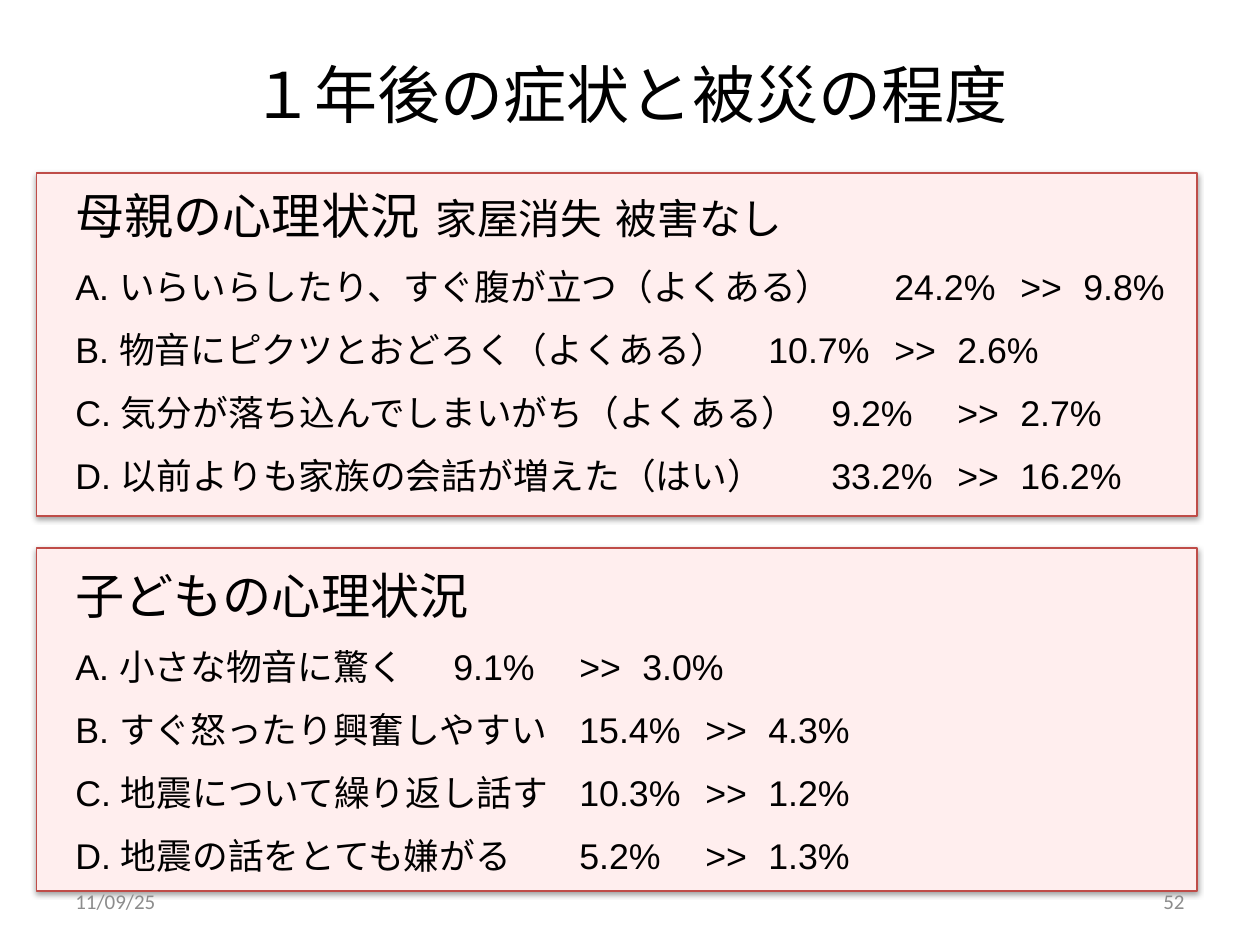
from lxml import etree
from pptx import Presentation
from pptx.dml.color import RGBColor
from pptx.enum.shapes import MSO_SHAPE
from pptx.enum.text import MSO_ANCHOR, PP_ALIGN
from pptx.oxml.ns import qn
from pptx.util import Inches, Pt

RECTANGLE = MSO_SHAPE.RECTANGLE
TOP, MIDDLE = MSO_ANCHOR.TOP, MSO_ANCHOR.MIDDLE
LEFT, CENTER, RIGHT = PP_ALIGN.LEFT, PP_ALIGN.CENTER, PP_ALIGN.RIGHT
WIDTH, HEIGHT = Inches(10), Inches(7.5)

MOTHER_ROWS = [
    ("A. いらいらしたり、すぐ腹が立つ（よくある）", "24.2%", "9.8%", 6.5),
    ("B. 物音にピクツとおどろく（よくある）", "10.7%", "2.6%", 5.5),
    ("C. 気分が落ち込んでしまいがち（よくある）", "9.2%", "2.7%", 6),
    ("D. 以前よりも家族の会話が増えた（はい）", "33.2%", "16.2%", 6),
]
CHILD_ROWS = [
    ("A. 小さな物音に驚く", "9.1%", "3.0%", 3),
    ("B. すぐ怒ったり興奮しやすい", "15.4%", "4.3%", 4),
    ("C. 地震について繰り返し話す", "10.3%", "1.2%", 4),
    ("D. 地震の話をとても嫌がる", "5.2%", "1.3%", 4),
]


def color(value):
    return RGBColor.from_string(value)


class SlideBuilder:
    text_color = "000000"
    muted_color = "8C8C8C"
    panel_fill = "FFEEEE"
    panel_line = "BF4C48"
    body_font, footer_font = "Arial", "Calibri"
    title_size, heading_size, label_size, row_size, footer_size = 36, 28.1, 23.8, 20.4, 12
    row_pitch = 36

    def __init__(self, presentation):
        self.slide = presentation.slides.add_slide(presentation.slide_layouts[6])

    def place(self, left, top, width, height):
        return int(WIDTH * left), int(HEIGHT * top), int(WIDTH * width), int(HEIGHT * height)

    def panel(self, *shares):
        shape = self.slide.shapes.add_shape(RECTANGLE, *self.place(*shares))
        shape.shadow.inherit = False
        shape.fill.solid()
        shape.fill.fore_color.rgb = color(self.panel_fill)
        shape.line.color.rgb = color(self.panel_line)
        shape.line.width = Pt(0.75)
        effects = shape._element.spPr.find(qn("a:effectLst"))
        shadow = etree.SubElement(effects, qn("a:outerShdw"), blurRad=str(Pt(3.1)),
                                  dist=str(Pt(1.6)), dir="5400000", rotWithShape="0")
        shade = etree.SubElement(shadow, qn("a:srgbClr"), val="000000")
        etree.SubElement(shade, qn("a:alpha"), val="38000")

    def text_frame(self, shares, anchor):
        frame = self.slide.shapes.add_textbox(*self.place(*shares)).text_frame
        frame.word_wrap = True
        frame.vertical_anchor = anchor
        return frame

    def run(self, paragraph, text, size, font=body_font, fill=text_color):
        run = paragraph.add_run()
        run.text = text
        run.font.size = Pt(size)
        run.font.name = font
        run.font.color.rgb = color(fill)

    def label(self, shares, text, size, align, font=body_font, fill=text_color):
        paragraph = self.text_frame(shares, MIDDLE).paragraphs[0]
        paragraph.alignment = align
        self.run(paragraph, text, size, font, fill)

    def line(self, paragraph, runs, pitch, stops=()):
        paragraph.line_spacing = Pt(pitch)
        if stops:
            tabs = etree.SubElement(paragraph._p.get_or_add_pPr(), qn("a:tabLst"))
            for stop in stops:
                etree.SubElement(tabs, qn("a:tab"), pos=str(Inches(stop)), algn="l")
        for text, size in runs:
            self.run(paragraph, text, size)

    def rows(self, frame, rows):
        for text, damaged, undamaged, start in rows:
            content = "\t".join([text, damaged, ">>", undamaged])
            self.line(frame.add_paragraph(), [(content, self.row_size)],
                      self.row_pitch, (start, start + 1, start + 1.5))


def main():
    presentation = Presentation()
    presentation.slide_width, presentation.slide_height = WIDTH, HEIGHT
    builder = SlideBuilder(presentation)

    for top in (0.58, 0.183):
        builder.panel(0.029, top, 0.921, 0.363)
    builder.label((0.05, 0.04, 0.9, 0.117), "１年後の症状と被災の程度",
                  builder.title_size, CENTER)

    body = builder.text_frame((0.05, 0.167, 0.9, 0.767), TOP)
    builder.line(body.paragraphs[0],
                 [("母親の心理状況 \t", builder.heading_size),
                  ("家屋消失\t被害なし", builder.label_size)], 46, (2.86, 4.29))
    builder.rows(body, MOTHER_ROWS)
    builder.line(body.add_paragraph(), [("子どもの心理状況", builder.heading_size)], 73)
    builder.rows(body, CHILD_ROWS)

    for left, text, align in ((0.05, "11/09/25", LEFT), (0.717, "52", RIGHT)):
        builder.label((left, 0.927, 0.233, 0.053), text, builder.footer_size,
                      align, builder.footer_font, builder.muted_color)
    presentation.save("out.pptx")


if __name__ == "__main__":
    main()
